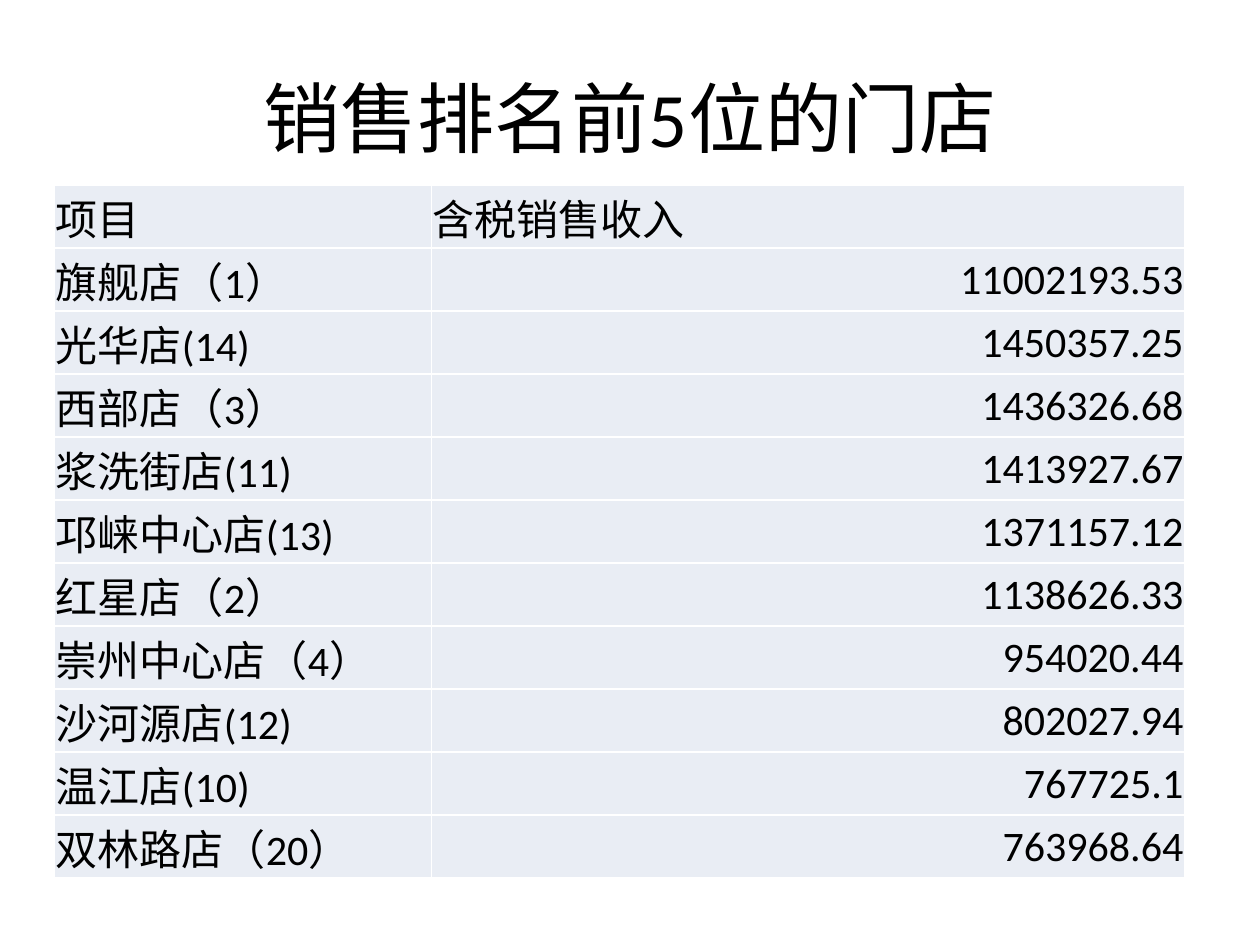
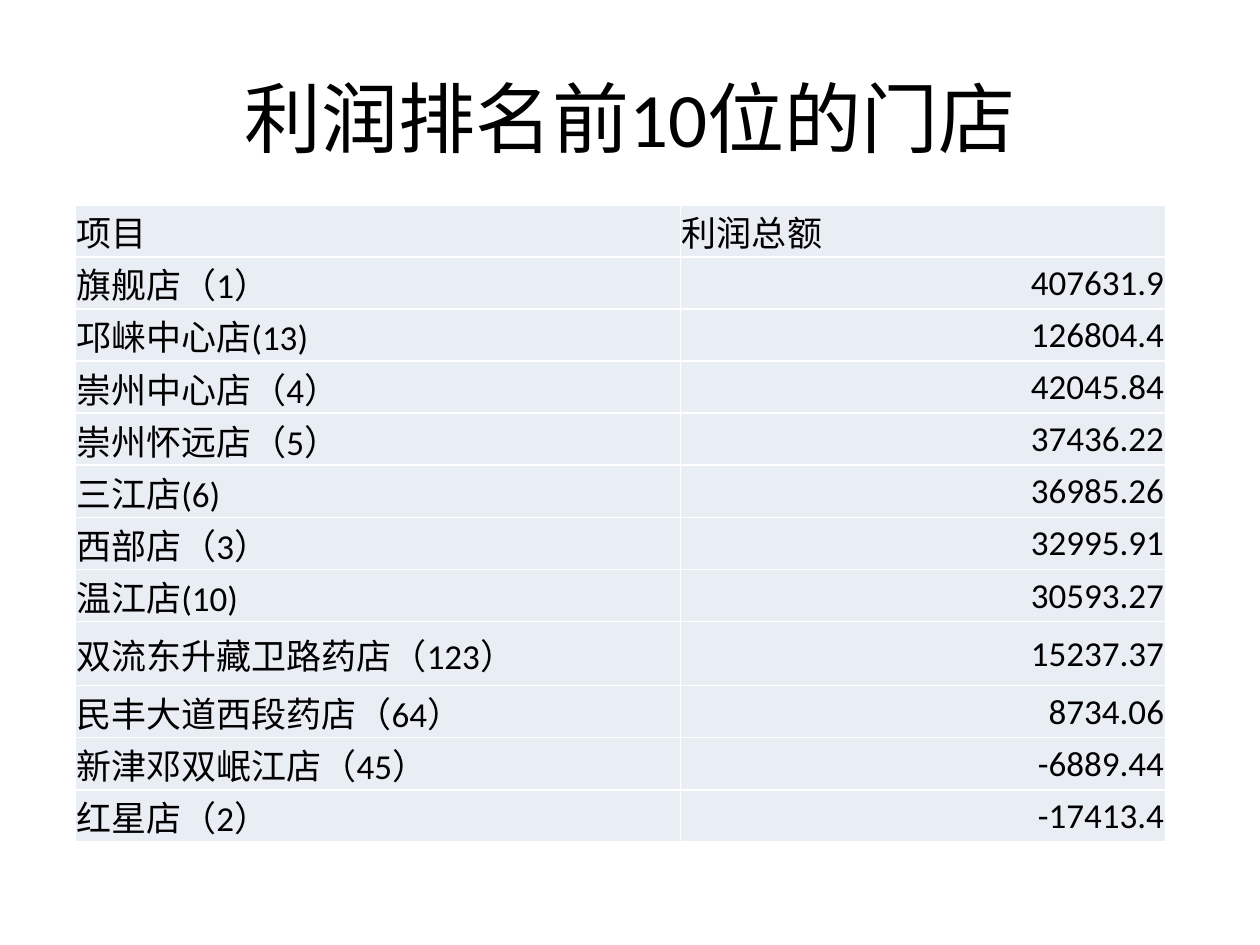
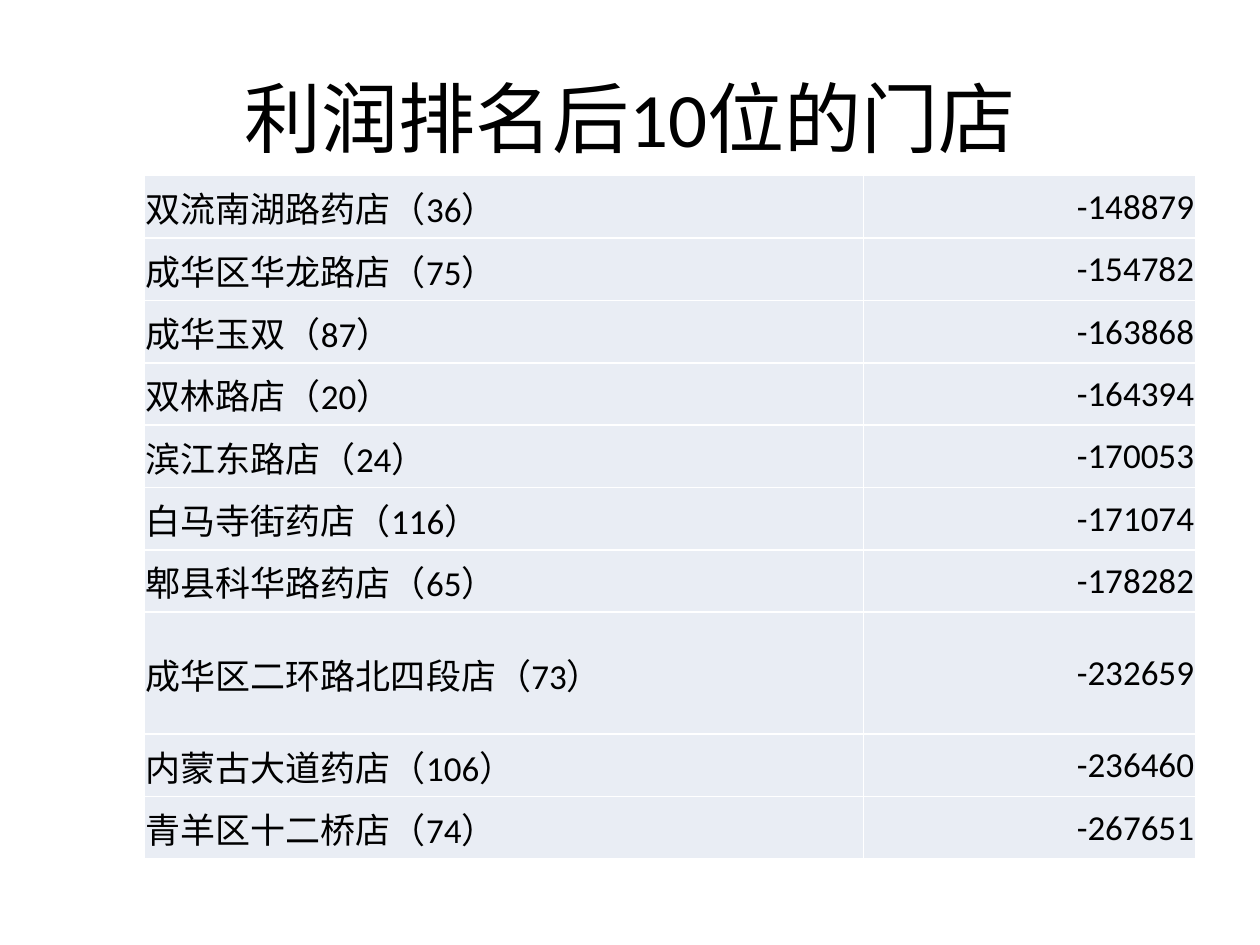
from lxml.etree import SubElement
from pptx import Presentation
from pptx.dml.color import RGBColor
from pptx.enum.text import MSO_ANCHOR, PP_ALIGN
from pptx.oxml.ns import qn
from pptx.util import Pt

FONT = "Calibri"
INK = "000000"
PALE = "E9EDF4"
WHITE = "FFFFFF"
TITLE_BOX = (36, 21.6, 648, 90)

SALES = [
    ("旗舰店（1）", "11002193.53"),
    ("光华店(14)", "1450357.25"),
    ("西部店（3）", "1436326.68"),
    ("浆洗街店(11)", "1413927.67"),
    ("邛崃中心店(13)", "1371157.12"),
    ("红星店（2）", "1138626.33"),
    ("崇州中心店（4）", "954020.44"),
    ("沙河源店(12)", "802027.94"),
    ("温江店(10)", "767725.1"),
    ("双林路店（20）", "763968.64"),
]
BEST = [
    ("旗舰店（1）", "407631.9"),
    ("邛崃中心店(13)", "126804.4"),
    ("崇州中心店（4）", "42045.84"),
    ("崇州怀远店（5）", "37436.22"),
    ("三江店(6)", "36985.26"),
    ("西部店（3）", "32995.91"),
    ("温江店(10)", "30593.27"),
    ("双流东升藏卫路药店（123）", "15237.37"),
    ("民丰大道西段药店（64）", "8734.06"),
    ("新津邓双岷江店（45）", "-6889.44"),
    ("红星店（2）", "-17413.4"),
]
WORST = [
    ("双流南湖路药店（36）", "-148879"),
    ("成华区华龙路店（75）", "-154782"),
    ("成华玉双（87）", "-163868"),
    ("双林路店（20）", "-164394"),
    ("滨江东路店（24）", "-170053"),
    ("白马寺街药店（116）", "-171074"),
    ("郫县科华路药店（65）", "-178282"),
    ("成华区二环路北四段店（73）", "-232659"),
    ("内蒙古大道药店（106）", "-236460"),
    ("青羊区十二桥店（74）", "-267651"),
]


def color(code):
    return RGBColor.from_string(code)


def style(para, size, align):
    para.alignment = align
    para.font.name = FONT
    para.font.size = Pt(size)
    para.font.color.rgb = color(INK)


def add_title(slide, text, box):
    title = slide.shapes.title
    title.left, title.top, title.width, title.height = map(Pt, box)
    frame = title.text_frame
    frame.text = text
    frame.vertical_anchor = MSO_ANCHOR.MIDDLE
    style(frame.paragraphs[0], 44, PP_ALIGN.CENTER)


def add_edges(cell):
    props = cell._tc.get_or_add_tcPr()
    for side in ("lnL", "lnR", "lnT", "lnB"):
        line = SubElement(props, qn(f"a:{side}"), w=str(Pt(1)))
        fill = SubElement(line, qn("a:solidFill"))
        SubElement(fill, qn("a:srgbClr"), val=WHITE)


def fill_cell(cell, text, size, align):
    add_edges(cell)
    cell.fill.solid()
    cell.fill.fore_color.rgb = color(PALE)
    cell.vertical_anchor = MSO_ANCHOR.MIDDLE
    cell.margin_left = cell.margin_right = cell.margin_top = Pt(0.72)
    cell.margin_bottom = 0
    cell.text = text
    style(cell.text_frame.paragraphs[0], size, align)


def add_grid(slide, box, split, rows, size, head=None, tall=None):
    left, top, width, height = box
    tall = tall or {}
    lines = [head, *rows] if head else rows
    step = (height - sum(tall.values())) / (len(lines) - len(tall))
    frame = slide.shapes.add_table(len(lines), 2, *map(Pt, box))
    table = frame.table
    table.first_row = table.horz_banding = False
    table.columns[0].width = Pt(split)
    table.columns[1].width = Pt(width - split)
    for r, line in enumerate(lines):
        table.rows[r].height = Pt(tall.get(r, step))
        for c, text in enumerate(line):
            number = c == 1 and line is not head
            align = PP_ALIGN.RIGHT if number else PP_ALIGN.LEFT
            fill_cell(table.cell(r, c), text, size, align)


def add_page(deck, title, box, split, rows, size, head=None, tall=None):
    slide = deck.slides.add_slide(deck.slide_layouts[5])
    add_title(slide, title, TITLE_BOX)
    add_grid(slide, box, split, rows, size, head, tall)


def main():
    deck = Presentation()
    deck.slide_width, deck.slide_height = Pt(720), Pt(540)
    add_page(deck, "销售排名前5位的门店", (31.2, 105.7, 645.8, 396), 215.3,
             SALES, 24, head=("项目", "含税销售收入"))
    add_page(deck, "利润排名前10位的门店", (42.75, 117, 623.2, 345), 346.2,
             BEST, 20, head=("项目", "利润总额"), tall={8: 36.7})
    add_page(deck, "利润排名后10位的门店", (82.5, 100.4, 600.6, 390.5), 411,
             WORST, 20, tall={7: 69.6})
    deck.save("out.pptx")


if __name__ == "__main__":
    main()
